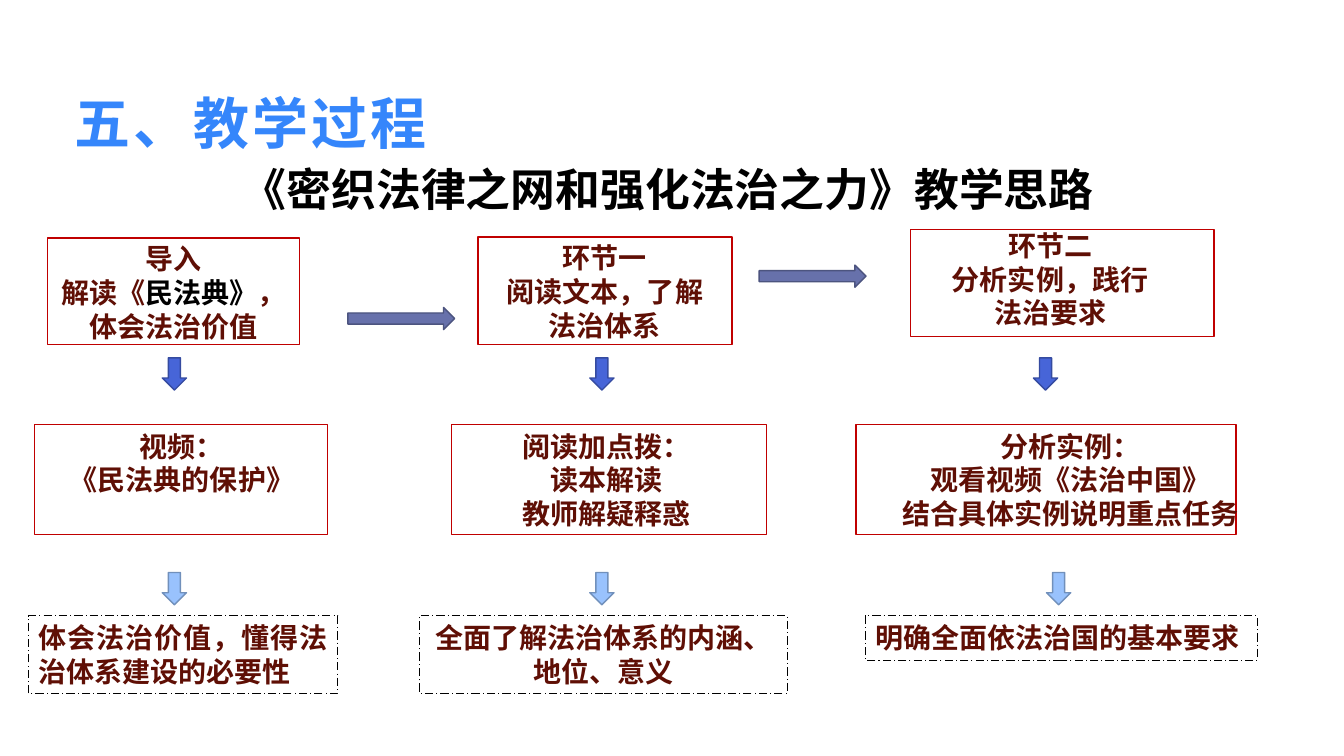
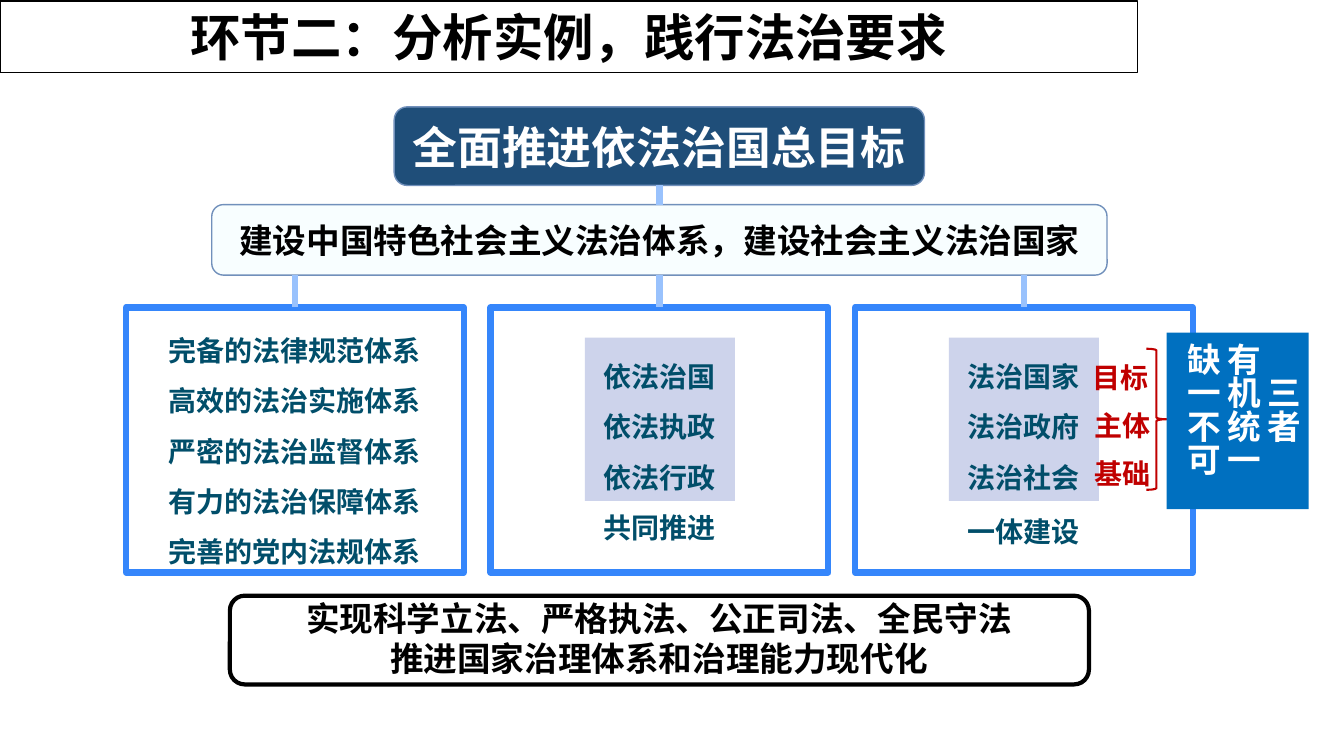
import dataclasses

import pptx
import pptx.dml.color
import pptx.enum.dml
import pptx.enum.shapes
import pptx.enum.text
import pptx.oxml.ns
import pptx.util
from lxml import etree

Inches = pptx.util.Inches
Pt = pptx.util.Pt
Shape = pptx.enum.shapes.MSO_SHAPE
Align = pptx.enum.text.PP_ALIGN
Anchor = pptx.enum.text.MSO_ANCHOR


@dataclasses.dataclass(frozen=True)
class Theme:
    font: str = "Noto Sans CJK SC"
    label_font: str = "Arial"
    black: str = "000000"
    white: str = "FFFFFF"
    blue: str = "3586FB"
    sky: str = "99C2FD"
    sky_edge: str = "7190BB"
    royal: str = "4765D8"
    royal_edge: str = "354BA0"
    slate: str = "6771AB"
    slate_edge: str = "4C547F"
    maroon: str = "5F0F05"
    red: str = "C00000"
    navy: str = "1F4E79"
    ice: str = "F8FEFF"
    lilac: str = "CDD3EB"
    teal: str = "014E6A"
    unity: str = "0070C0"
    title: int = 40
    banner: int = 36
    heading: int = 32
    lead: int = 24
    body: int = 20
    leading: float = 1.2
    loose: float = 1.8


THEME = Theme()

PROCESS_TITLE = "五、教学过程"
PROCESS_SUBTITLE = "《密织法律之网和强化法治之力》教学思路"
STEPS = [
    ((0.47, 2.36, 2.5, 1.06), (0.47, 2.35, 2.5, 1.11),
     ["导入", [("解读《", THEME.maroon), ("民法典》", THEME.black),
              ("，体会法治价值", THEME.maroon)]]),
    ((4.74, 2.35, 2.52, 1.07), (4.75, 2.34, 2.5, 1.11),
     ["环节一", "阅读文本，了解", "法治体系"]),
    ((9.03, 2.28, 3.01, 1.06), (9.07, 2.22, 2.69, 1.11),
     ["环节二", "分析实例，践行", "法治要求"]),
]
ACTIVITIES = [
    ((0.34, 4.21, 2.91, 1.09), (0, 4.21, 3.61, 0.77),
     ["视频：", "《民法典的保护》"]),
    ((4.48, 4.21, 3.12, 1.09), (4.31, 4.21, 3.41, 1.11),
     ["阅读加点拨：", "读本解读", "教师解疑释惑"]),
    ((8.49, 4.21, 3.77, 1.09), (8.72, 4.21, 3.8, 1.11),
     ["分析实例：", "观看视频《法治中国》", "结合具体实例说明重点任务"]),
]
OUTCOMES = [
    ((0.28, 6.11, 3.07, 0.77), Align.JUSTIFY, "体会法治价值，懂得法治体系建设的必要性"),
    ((4.16, 6.11, 3.65, 0.77), Align.CENTER, "全面了解法治体系的内涵、地位、意义"),
    ((8.58, 6.11, 3.89, 0.44), Align.JUSTIFY, "明确全面依法治国的基本要求"),
]
STEP_ARROWS = [(3.45, 3.05), (7.53, 2.63)]
DOWN_ARROWS = [
    (3.55, THEME.royal, THEME.royal_edge, (1.61, 5.85, 10.25)),
    (5.68, THEME.sky, THEME.sky_edge, (1.61, 5.85, 10.38)),
]

GOAL_TITLE = "环节二：分析实例，践行法治要求"
GOAL = "全面推进依法治国总目标"
GOAL_DETAIL = "建设中国特色社会主义法治体系，建设社会主义法治国家"
SYSTEMS = ["完备的法律规范体系", "高效的法治实施体系", "严密的法治监督体系",
           "有力的法治保障体系", "完善的党内法规体系"]
PILLARS = [
    (5.8, ["依法治国", "依法执政", "依法行政"], 5.02, "共同推进"),
    (9.41, ["法治国家", "法治政府", "法治社会"], 5.06, "一体建设"),
]
ROLES = [(10.74, "目标"), (10.76, "主体"), (10.76, "基础")]
UNITY = ["三者", "有机统一", "缺一不可"]
RESULTS = ["实现科学立法、严格执法、公正司法、全民守法", "推进国家治理体系和治理能力现代化"]


def rgb(value):
    return pptx.dml.color.RGBColor.from_string(value)


def inches(at):
    return [Inches(value) for value in at]


def format_span(span, size, color, font, spacing):
    span.font.size = Pt(size)
    span.font.bold = True
    span.font.name = font
    span.font.color.rgb = rgb(color)
    properties = span.font._element
    east_asian = etree.SubElement(properties, pptx.oxml.ns.qn("a:ea"))
    east_asian.set("typeface", THEME.font)
    if spacing:
        properties.set("spc", str(spacing))


def write(box, lines, size, color, align=Align.CENTER, anchor=Anchor.TOP,
          font=THEME.font, leading=THEME.leading, wrap=True, spacing=0):
    frame = box.text_frame
    frame.auto_size = pptx.enum.text.MSO_AUTO_SIZE.NONE
    frame.word_wrap = wrap
    frame.vertical_anchor = anchor
    for index, line in enumerate(lines):
        para = frame.add_paragraph() if index else frame.paragraphs[0]
        para.alignment = align
        para.space_before = Pt(0)
        para.line_spacing = Pt(size * leading)
        pieces = [(line, color)] if isinstance(line, str) else line
        for text, piece_color in pieces:
            span = para.add_run()
            span.text = text
            format_span(span, size, piece_color, font, spacing)
    return box


def paint(shape, fill=None, edge=None, width=1):
    if fill:
        shape.fill.solid()
        shape.fill.fore_color.rgb = rgb(fill)
    else:
        shape.fill.background()
    if edge:
        shape.line.color.rgb = rgb(edge)
        shape.line.width = Pt(width)
    else:
        shape.line.fill.background()
    return shape


def add_block(page, kind, at, fill=None, edge=None, width=1):
    shape = page.shapes.add_shape(kind, *inches(at))
    shape.shadow.inherit = False
    return paint(shape, fill, edge, width)


def add_label(page, at, lines, size, color, **style):
    return write(page.shapes.add_textbox(*inches(at)), lines, size, color, **style)


def add_link(page, start, end, begin=None, finish=None):
    link = page.shapes.add_connector(
        pptx.enum.shapes.MSO_CONNECTOR.STRAIGHT, *inches(start + end))
    if begin is not None:
        link.begin_connect(begin, 2)
    if finish is not None:
        link.end_connect(finish, 0)
    link.line.color.rgb = rgb(THEME.sky)
    link.line.width = Pt(4.5)
    etree.SubElement(link._element.spPr, pptx.oxml.ns.qn("a:effectLst"))


def add_page(deck, title, at, size, color, **style):
    page = deck.slides.add_slide(deck.slide_layouts[5])
    box = page.shapes.title
    box.left, box.top, box.width, box.height = inches(at)
    write(box, [title], size, color, anchor=Anchor.MIDDLE, **style)
    return page


def build_process(deck):
    page = add_page(deck, PROCESS_TITLE, (0.67, 0.88, 12, 0.67), THEME.title,
                    THEME.blue, align=Align.LEFT, spacing=240)
    frame = page.shapes.title.text_frame
    frame.margin_left = frame.margin_right = Inches(0.07)
    frame.margin_top = frame.margin_bottom = Inches(0.03)
    add_label(page, (2.3, 1.56, 9.16, 0.64), [PROCESS_SUBTITLE], THEME.heading,
              THEME.black, align=Align.JUSTIFY)
    for frame_at, text_at, lines in STEPS + ACTIVITIES:
        add_block(page, Shape.RECTANGLE, frame_at, edge=THEME.red)
        add_label(page, text_at, lines, THEME.body, THEME.maroon)
    for at, align, text in OUTCOMES:
        outcome = add_block(page, Shape.RECTANGLE, at, edge=THEME.black, width=0.75)
        outcome.line.dash_style = pptx.enum.dml.MSO_LINE.LONG_DASH_DOT
        write(outcome, [text], THEME.body, THEME.maroon, align=align)
    for left, top in STEP_ARROWS:
        add_block(page, Shape.RIGHT_ARROW, (left, top, 1.06, 0.22),
                  THEME.slate, THEME.slate_edge)
    for top, fill, edge, lefts in DOWN_ARROWS:
        for left in lefts:
            add_block(page, Shape.DOWN_ARROW, (left, top, 0.24, 0.32), fill, edge)


def build_goal(deck):
    page = add_page(deck, GOAL_TITLE, (0, 0.01, 11.28, 0.71), THEME.banner, THEME.black)
    paint(page.shapes.title, THEME.white, THEME.black, 0.75)

    goal = add_block(page, Shape.ROUNDED_RECTANGLE, (3.91, 1.06, 5.26, 0.78),
                     THEME.navy, THEME.sky_edge)
    write(goal, [GOAL], THEME.heading, THEME.white, anchor=Anchor.MIDDLE)
    detail = add_block(page, Shape.ROUNDED_RECTANGLE, (2.1, 2.03, 8.88, 0.7),
                       THEME.ice, THEME.sky_edge)
    write(detail, [GOAL_DETAIL], THEME.lead, THEME.black, anchor=Anchor.MIDDLE)

    add_label(page, (1.38, 3.09, 3.08, 2.63), SYSTEMS, THEME.body, THEME.teal,
              leading=THEME.loose)
    for left, lines, caption_top, caption in PILLARS:
        panel = add_block(page, Shape.RECTANGLE, (left, 3.35, 1.49, 1.62), THEME.lilac)
        write(panel, lines, THEME.body, THEME.teal, leading=THEME.loose)
        add_label(page, (left + 0.08, caption_top, 1.32, 0.44), [caption],
                  THEME.body, THEME.teal, wrap=False)

    add_link(page, (6.54, 1.84), (6.54, 2.03), goal, detail)
    frame_width, pitch = 3.35, 3.615
    for index in range(3):
        left = 1.25 + index * pitch
        middle = left + frame_width / 2
        frame = add_block(page, Shape.RECTANGLE, (left, 3.05, frame_width, 2.63),
                          edge=THEME.blue, width=4.5)
        add_link(page, (middle, 2.73), (middle, 3.05),
                 detail if index == 1 else None, frame)

    add_block(page, Shape.ROUNDED_RECTANGLE, (2.28, 5.91, 8.52, 0.88),
              edge=THEME.black, width=3)
    add_label(page, (2.74, 5.88, 7.59, 0.91), RESULTS, THEME.lead, THEME.black)

    for index, (left, role) in enumerate(ROLES):
        add_label(page, (left, 3.53 + index * 0.475, 0.99, 0.44), [role], THEME.body,
                  THEME.red, align=Align.LEFT, font=THEME.label_font)
    add_block(page, Shape.RIGHT_BRACE, (11.37, 3.46, 0.2, 1.4), edge=THEME.red, width=1.5)
    unity = add_block(page, Shape.RECTANGLE, (11.57, 3.3, 1.41, 1.75), THEME.unity)
    write(unity, UNITY, THEME.lead, THEME.white, font=THEME.label_font)
    unity.element.txBody.bodyPr.set("vert", "eaVert")


def main():
    deck = pptx.Presentation()
    deck.slide_width, deck.slide_height = Inches(13.33), Inches(7.5)
    build_process(deck)
    build_goal(deck)
    deck.save("out.pptx")


if __name__ == "__main__":
    main()
